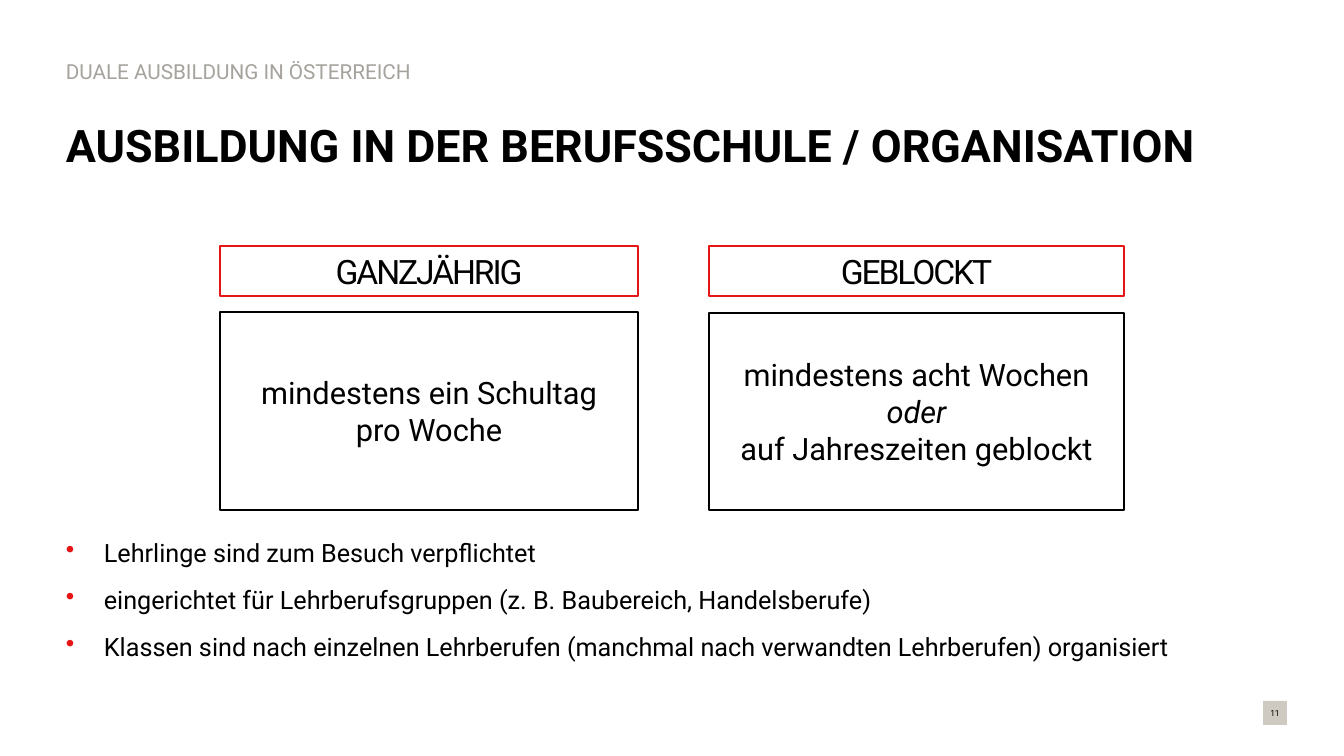
from lxml import etree
from pptx import Presentation
from pptx.dml.color import RGBColor
from pptx.enum.shapes import MSO_SHAPE
from pptx.enum.text import MSO_ANCHOR, PP_ALIGN
from pptx.oxml.ns import qn
from pptx.util import Pt

RECT = MSO_SHAPE.RECTANGLE
TOP, MIDDLE = MSO_ANCHOR.TOP, MSO_ANCHOR.MIDDLE
LEFT, CENTER = PP_ALIGN.LEFT, PP_ALIGN.CENTER

TOPIC = "DUALE AUSBILDUNG IN ÖSTERREICH"
TITLE = "AUSBILDUNG IN DER BERUFSSCHULE / ORGANISATION"
# Each model: left, width, body top, heading, body lines as (text, italic)
MODELS = [
    (220, 418, 312, "GANZJÄHRIG",
     [("mindestens ein Schultag", False), ("pro Woche", False)]),
    (709, 415, 313, "GEBLOCKT",
     [("mindestens acht Wochen", False), ("oder", True),
      ("auf Jahreszeiten geblockt", False)]),
]
POINTS = [
    "Lehrlinge sind zum Besuch verpflichtet",
    "eingerichtet für Lehrberufsgruppen (z. B. Baubereich, Handelsberufe)",
    "Klassen sind nach einzelnen Lehrberufen (manchmal nach verwandten "
    "Lehrberufen) organisiert",
]
PAGE = "11"

THEME = {
    "font": "Roboto",
    "black": "000000", "white": "FFFFFF", "red": "E61414",
    "gray": "A6A39D", "sand": "CECAC2",
    "topic": 14.8, "title": 32, "head": 24, "body": 22, "point": 18, "page": 6,
}

WIDE, HIGH = 1344, 756
MARGIN = 56
HEAD_TOP, HEAD_HIGH = 246, 50
BODY_END = 510
INDENT = 38
GAP = 6


def px(n):
    return round(n * 914400 / 100.8)


def rgb(name):
    return RGBColor.from_string(THEME[name])


def apply(item, values):
    for key, value in values.items():
        setattr(item, key, value)


def write(shape, lines, size, color="black", align=LEFT, anchor=MIDDLE,
          bold=False, track=0, bullet=False, **form):
    """Fill a shape with one paragraph per (text, italic) line."""
    frame = shape.text_frame
    apply(frame, {"word_wrap": True, "vertical_anchor": anchor})
    for i, (text, italic) in enumerate(lines):
        para = frame.add_paragraph() if i else frame.paragraphs[0]
        if bullet:
            mark(para)
        apply(para, {"alignment": align, **form})
        if bullet:
            apply(para, {"space_before": Pt(GAP if i else 0),
                         "space_after": Pt(GAP)})
        run = para.add_run()
        run.text = text
        apply(run.font, {"name": THEME["font"], "size": Pt(THEME[size]),
                         "bold": bold, "italic": italic})
        run.font.color.rgb = rgb(color)
        if track:
            run.font._element.set("spc", str(track))


def mark(para):
    """Give a paragraph a red bullet and a hanging indent."""
    props = para._p.get_or_add_pPr()
    props.set("marL", str(px(INDENT)))
    props.set("indent", str(-px(INDENT)))
    tint = etree.SubElement(props, qn("a:buClr"))
    etree.SubElement(tint, qn("a:srgbClr"), val=THEME["red"])
    etree.SubElement(props, qn("a:buChar"), char="•")


def label(slide, box, lines, size, **form):
    write(slide.shapes.add_textbox(*map(px, box)), lines, size, **form)


def panel(slide, box, fill, line=None):
    shape = slide.shapes.add_shape(RECT, *map(px, box))
    shape.shadow.inherit = False
    shape.fill.solid()
    shape.fill.fore_color.rgb = rgb(fill)
    if line:
        shape.line.color.rgb = rgb(line)
        shape.line.width = Pt(1)
    else:
        shape.line.fill.background()
    return shape


def main():
    deck = Presentation()
    apply(deck, {"slide_width": px(WIDE), "slide_height": px(HIGH)})
    slide = deck.slides.add_slide(deck.slide_layouts[6])

    label(slide, (MARGIN, 56, 615, 33), [(TOPIC, False)], "topic",
          color="gray", line_spacing=0.9)
    label(slide, (MARGIN, 90, 1230, 117), [(TITLE, False)], "title",
          bold=True, line_spacing=0.9)

    for left, width, top, head, lines in MODELS:
        body = panel(slide, (left, top, width, BODY_END - top), "white", "black")
        write(body, lines, "body", align=CENTER)
        bar = panel(slide, (left, HEAD_TOP, width, HEAD_HIGH), "white", "red")
        write(bar, [(head, False)], "head", align=CENTER, track=-150)

    label(slide, (MARGIN, 532, 1165, 174), [(text, False) for text in POINTS],
          "point", anchor=TOP, bullet=True)

    badge = panel(slide, (1263, 701, 24, 24), "sand")
    apply(badge.text_frame, dict.fromkeys(
        ("margin_left", "margin_right", "margin_top", "margin_bottom"), 0))
    write(badge, [(PAGE, False)], "page", align=CENTER)

    deck.save("out.pptx")


if __name__ == "__main__":
    main()
